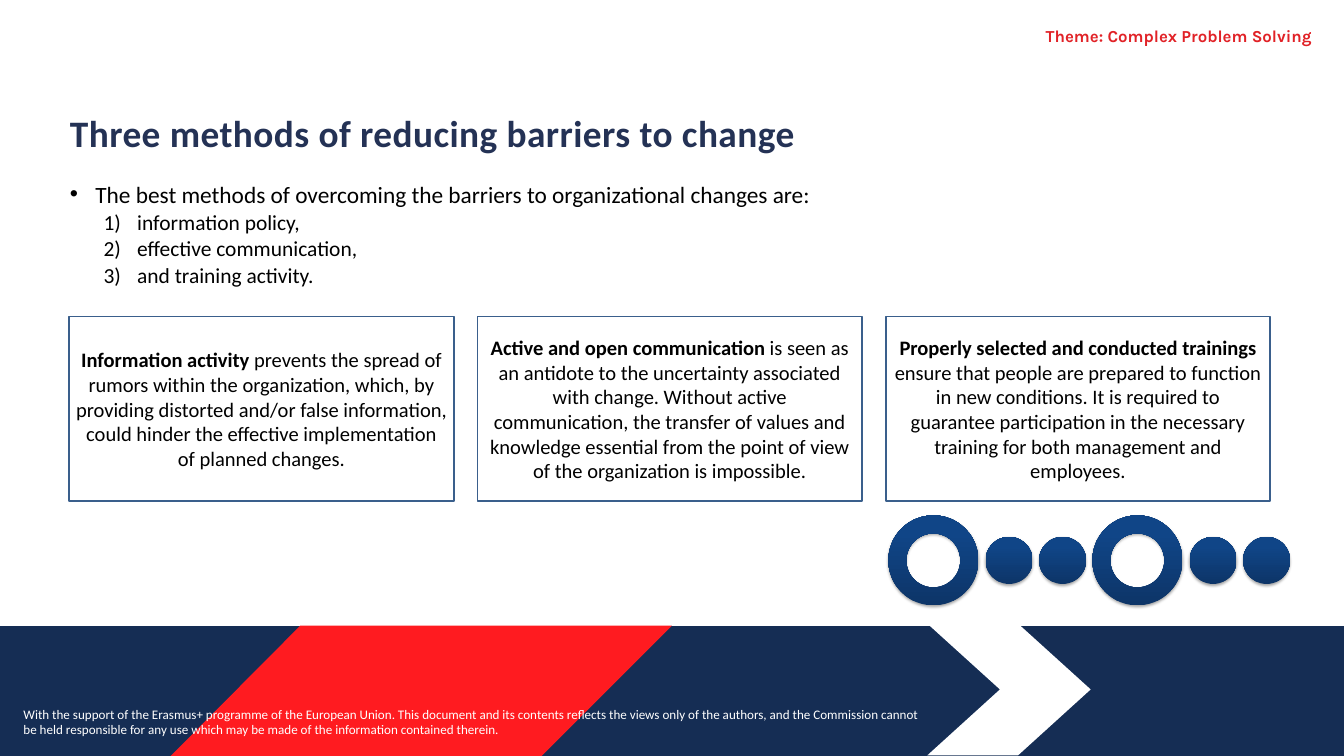
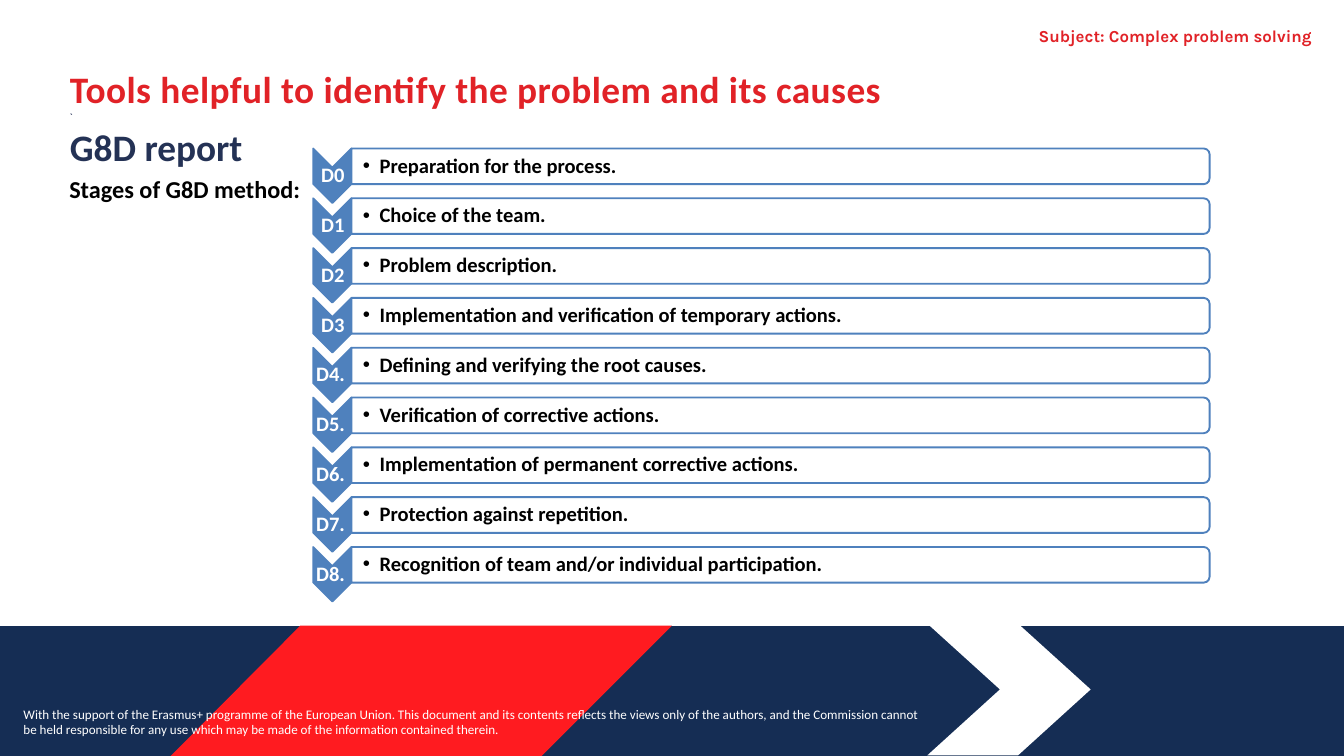
"""Build two training slides about reducing barriers to change and the G8D report."""
from copy import deepcopy
from dataclasses import dataclass, field

from lxml import etree
from pptx import Presentation
from pptx.dml.color import RGBColor
from pptx.enum.shapes import MSO_SHAPE
from pptx.enum.text import MSO_ANCHOR, MSO_AUTO_SIZE, PP_ALIGN
from pptx.oxml.ns import qn
from pptx.util import Pt

CHEVRON = MSO_SHAPE.CHEVRON
DONUT = MSO_SHAPE.DONUT
ELLIPSE = MSO_SHAPE.OVAL
PROCESS = MSO_SHAPE.FLOWCHART_PROCESS
ROUNDED_END = MSO_SHAPE.ROUND_2_SAME_RECTANGLE
MIDDLE = MSO_ANCHOR.MIDDLE
GROW = MSO_AUTO_SIZE.SHAPE_TO_FIT_TEXT
CENTER = PP_ALIGN.CENTER
RIGHT = PP_ALIGN.RIGHT


@dataclass(frozen=True)
class Theme:
    """Colours, fonts and type sizes of the deck."""
    navy: str = "152D54"
    red: str = "FF1B20"
    accent: str = "E12227"
    heading: str = "243255"
    white: str = "FFFFFF"
    black: str = "000000"
    card_line: str = "3A5F8C"
    step: str = "4F81BD"
    ring_stops: tuple = ((0, "0D3568"), (0.8, "104587"), (1, "0E458A"))
    body_font: str = "Calibri"
    theme_font: str = "Karla"
    title_size: int = 40
    stage_size: int = 26
    lead_size: int = 25
    item_size: int = 23
    card_size: int = 22
    theme_size: int = 18
    footer_size: int = 14
    mark_size: int = 10


THEME = Theme()


@dataclass
class Style:
    """Character style of a run."""
    size: int
    color: str = THEME.black
    bold: bool = False
    font: str = THEME.body_font
    tracking: float = 0


@dataclass
class Line:
    """Paragraph with its runs, spacing and list mark."""
    runs: list
    values: dict = field(default_factory=dict)
    margin: float = 0
    indent: float = 0
    bullet: str = ""


TITLE = Style(THEME.title_size, THEME.heading, True, tracking=0.5)
RED_TITLE = Style(THEME.title_size, THEME.accent, True, tracking=0.5)
REPORT = Style(THEME.title_size, THEME.heading, True)
MARK = Style(THEME.mark_size, THEME.heading, True)
STAGE = Style(THEME.stage_size, bold=True)
LEAD = Style(THEME.lead_size)
ITEM = Style(THEME.item_size)
CARD = Style(THEME.card_size)
CARD_BOLD = Style(THEME.card_size, bold=True)
STEP_LABEL = Style(THEME.card_size, THEME.white, True)
FOOTER = Style(THEME.footer_size, THEME.white)
THEME_LINE = Style(THEME.theme_size, THEME.accent, True, THEME.theme_font)

MARGIN = 74.2
BAND_TOP = 670.3
SPACED = {"space_before": Pt(1.1)}
FOOTER_TEXT = (
    "With the support of the Erasmus+ programme of the European Union. This document and its "
    "contents reflects the views only of the authors, and the Commission cannot be held "
    "responsible for any use which may be made of the information contained therein."
)
BANDS = (
    (THEME.navy, ((0, BAND_TOP), (1440, BAND_TOP), (1440, 810), (0, 810))),
    (THEME.white, ((1090.8, 809.3), (993.6, 809.3), (1071.4, 738.7),
                   (993.6, 668.2), (1090.8, 668.2), (1168.6, 738.7))),
    (THEME.red, ((720, BAND_TOP), (580.3, 810), (182.9, 810), (321.8, BAND_TOP))),
)
METHODS = ("information policy,", "effective communication,", "and training activity.")
CARDS = (
    ("Information activity ",
     "prevents the spread of rumors within the organization, which, by providing distorted "
     "and/or false information, could hinder the effective implementation of planned changes."),
    ("Active and open communication ",
     "is seen as an antidote to the uncertainty associated with change. Without active "
     "communication, the transfer of values and knowledge essential from the point of view of "
     "the organization is impossible."),
    ("Properly selected and conducted trainings ",
     "ensure that people are prepared to function in new conditions. It is required to guarantee "
     "participation in the necessary training for both management and employees."),
)
STEPS = (
    ("D0", "Preparation for the process."),
    ("D1", "Choice of the team."),
    ("D2", "Problem description."),
    ("D3", "Implementation and verification of temporary actions."),
    ("D4. ", "Defining and verifying the root causes."),
    ("D5. ", "Verification of corrective actions."),
    ("D6. ", "Implementation of permanent corrective actions."),
    ("D7. ", "Protection against repetition."),
    ("D8. ", "Recognition of team and/or individual participation."),
)


def apply(target, values):
    """Set each named attribute on the target."""
    for name, value in values.items():
        setattr(target, name, value)


def add_run(paragraph, text, style):
    """Add one styled run."""
    run = paragraph.add_run()
    run.text = text
    apply(run.font, {"size": Pt(style.size), "bold": style.bold, "name": style.font})
    run.font.color.rgb = RGBColor.from_string(style.color)
    if style.tracking:
        run.font._element.set("spc", str(int(style.tracking * 100)))


def set_list_mark(paragraph, line):
    """Give a paragraph its indents and its bullet or number."""
    properties = paragraph._p.get_or_add_pPr()
    properties.set("marL", str(Pt(line.margin)))
    properties.set("indent", str(Pt(line.indent)))
    if line.bullet == "number":
        etree.SubElement(properties, qn("a:buAutoNum"), type="arabicParenR")
    elif line.bullet:
        etree.SubElement(properties, qn("a:buFont"), typeface="Arial")
        etree.SubElement(properties, qn("a:buChar"), char=line.bullet)


def write(shape, lines, **values):
    """Fill the text frame of a shape with lines."""
    frame = shape.text_frame
    apply(frame, {"word_wrap": True, **values})
    for index, line in enumerate(lines):
        paragraph = frame.add_paragraph() if index else frame.paragraphs[0]
        apply(paragraph, line.values)
        set_list_mark(paragraph, line)
        for text, style in line.runs:
            add_run(paragraph, text, style)


def insets(left, top, right, bottom):
    """Return the text frame margins as format values."""
    sides = {"left": left, "top": top, "right": right, "bottom": bottom}
    return {f"margin_{side}": Pt(value) for side, value in sides.items()}


def add_text(shapes, box, lines, **values):
    """Add a wrapped text box."""
    write(shapes.add_textbox(*map(Pt, box)), lines, **values)


def paint(shape, fill=None, line=None):
    """Set a plain fill and outline without shadow."""
    shape.shadow.inherit = False
    if fill:
        shape.fill.solid()
        shape.fill.fore_color.rgb = RGBColor.from_string(fill)
    else:
        shape.fill.background()
    if line:
        shape.line.color.rgb = RGBColor.from_string(line)
        shape.line.width = Pt(2)
    else:
        shape.line.fill.background()


def add_box(shapes, kind, box, fill=None, line=None, rotation=0):
    """Add a painted preset shape."""
    shape = shapes.add_shape(kind, *map(Pt, box))
    shape.rotation = rotation
    paint(shape, fill, line)
    return shape


def add_polygon(shapes, color, points):
    """Add a filled closed outline."""
    corners = [(Pt(x), Pt(y)) for x, y in points]
    builder = shapes.build_freeform(*corners[0])
    builder.add_line_segments(corners[1:], close=True)
    paint(builder.convert_to_shape(), color)


def add_ring(shapes, kind, left, top, size):
    """Add a gradient circle or donut with a soft shadow."""
    shape = add_box(shapes, kind, (left, top, size, size))
    if kind == DONUT:
        shape.adjustments[0] = 0.2
    shape.fill.gradient()
    shape.fill.gradient_angle = 90
    properties = shape._element.spPr
    stop_list = properties.find(".//" + qn("a:gsLst"))
    stop_list.append(deepcopy(stop_list[-1]))
    for stop, (position, color) in zip(shape.fill.gradient_stops, THEME.ring_stops):
        stop.position = position
        stop.color.rgb = RGBColor.from_string(color)
    shadow = etree.SubElement(
        properties.find(qn("a:effectLst")), qn("a:outerShdw"), blurRad=str(Pt(3.1)),
        dist=str(Pt(1.8)), dir="5400000", rotWithShape="0")
    color = etree.SubElement(shadow, qn("a:srgbClr"), val=THEME.black)
    etree.SubElement(color, qn("a:alpha"), val="35000")


def add_ring_chain(slide):
    """Add two repeats of a donut followed by two dots."""
    shapes = slide.shapes.add_group_shape().shapes
    for left in (951.8, 1170.4):
        add_ring(shapes, DONUT, left, 552.2, 96.5)
        for offset in (104.2, 161.5):
            add_ring(shapes, ELLIPSE, left + offset, 575.3, 50.4)


def add_card(slide, index, heading, body):
    """Add one outlined card of the row of three."""
    box = (MARGIN + 437.4 * index, 339.1, 411.8, 198)
    card = add_box(slide.shapes, PROCESS, box, line=THEME.card_line)
    line = Line([(heading, CARD_BOLD), (body, CARD)], {"alignment": CENTER})
    write(card, [line], vertical_anchor=MIDDLE)


def add_step(shapes, index, label, text):
    """Add one chevron with its label and rounded bar."""
    top = 53.37 * index
    add_box(shapes, CHEVRON, (326.9, 167.8 + top, 58.3, 41), THEME.step, THEME.step, 90)
    add_text(shapes, (336.2, 180 + top, 41, 17.3),
             [Line([(label, STEP_LABEL)], {"alignment": CENTER, "line_spacing": 0.9})],
             vertical_anchor=MIDDLE, **insets(1.4, 1.4, 1.4, 1.4))
    add_box(shapes, ROUNDED_END, (817.2, -281.5 + top, 38.2, 919.4),
            THEME.white, THEME.step, 90)
    add_text(shapes, (376.6, 161 + top, 917.3, 34.6),
             [Line([(text, CARD_BOLD)], {"level": 1, "line_spacing": 0.9}, 18, -18, "•")],
             vertical_anchor=MIDDLE, **insets(12.2, 1.4, 1.4, 1.4))


def add_framed_slide(presentation, theme_text):
    """Add a blank slide with bands, footer and theme line."""
    slide = presentation.slides.add_slide(presentation.slide_layouts[6])
    for color, points in BANDS:
        add_polygon(slide.shapes, color, points)
    add_text(slide.shapes, (18, 753.1, 990, 41), [Line([(FOOTER_TEXT, FOOTER)])],
             auto_size=GROW)
    add_text(slide.shapes, (648, 26.6, 757.4, 23),
             [Line([(theme_text, THEME_LINE)], {"alignment": RIGHT})],
             auto_size=GROW, **insets(0, 0.7, 0, 0))
    return slide


def build_methods(presentation):
    """Build the slide on three methods."""
    slide = add_framed_slide(presentation, "Theme: Complex Problem Solving")
    lead = "The best methods of overcoming the barriers to organizational changes are:"
    lines = [
        Line([("Three methods of reducing barriers to change", TITLE)], SPACED, 0.7),
        Line([(lead, LEAD)], {"space_before": Pt(26.6)}, 28, -27.4, "•"),
    ]
    lines += [Line([(method, ITEM)], {"level": 1, **SPACED}, 72.7, -36, "number")
              for method in METHODS]
    add_text(slide.shapes, (MARGIN, 116.6, 1138.3, 252.7), lines,
             auto_size=GROW, **insets(0, 1.4, 0, 0))
    for index, (heading, body) in enumerate(CARDS):
        add_card(slide, index, heading, body)
    add_ring_chain(slide)


def build_report(presentation):
    """Build the slide on the stages of the G8D report."""
    slide = add_framed_slide(presentation, "Subject: Complex problem solving")
    title = "Tools helpful to identify the problem and its causes"
    add_text(slide.shapes, (MARGIN, 69.1, 1306, 185.8), [
        Line([(title, RED_TITLE)], SPACED, 0.7),
        Line([("`", MARK)], SPACED, 0.7),
        Line([("G8D report", REPORT)], {"space_after": Pt(6), **SPACED}, 0.7),
        Line([("Stages of G8D method:", STAGE)]),
    ], auto_size=GROW, **insets(0, 1.4, 0, 0))
    shapes = slide.shapes.add_group_shape().shapes
    for index, (label, text) in enumerate(STEPS):
        add_step(shapes, index, label, text)


def main():
    """Create and save the presentation."""
    presentation = Presentation()
    apply(presentation, {"slide_width": Pt(1440), "slide_height": Pt(810)})
    build_methods(presentation)
    build_report(presentation)
    presentation.save("out.pptx")


if __name__ == "__main__":
    main()
